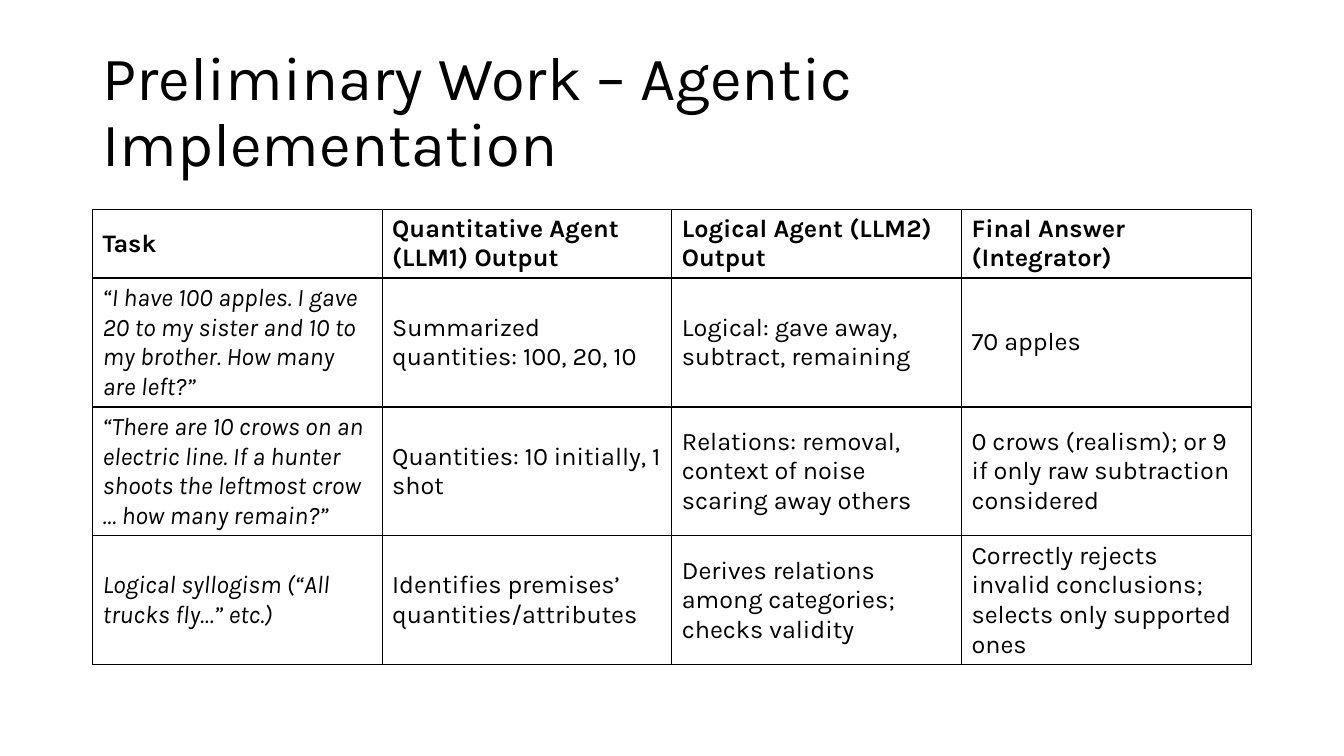
"""Build the slide on preliminary work: a title above a table of agent outputs."""
from lxml.etree import SubElement
from pptx import Presentation
from pptx.dml.color import RGBColor
from pptx.enum.text import MSO_ANCHOR
from pptx.oxml.ns import qn
from pptx.util import Cm, Pt

TITLE = "Preliminary Work – Agentic Implementation"
ROWS = [
    ("Task", "Quantitative Agent (LLM1) Output",
     "Logical Agent (LLM2) Output", "Final Answer (Integrator)"),
    ("“I have 100 apples. I gave 20 to my sister and 10 to my brother. How many are left?”",
     "Summarized quantities: 100, 20, 10",
     "Logical: gave away, subtract, remaining",
     "70 apples"),
    ("“There are 10 crows on an electric line. If a hunter shoots the leftmost crow … how many remain?”",
     "Quantities: 10 initially, 1 shot",
     "Relations: removal, context of noise scaring away others",
     "0 crows (realism); or 9 if only raw subtraction considered"),
    ("Logical syllogism (“All trucks fly…” etc.)",
     "Identifies premises’ quantities/attributes",
     "Derives relations among categories; checks validity",
     "Correctly rejects invalid conclusions; selects only supported ones"),
]
COLORS = {"ink": "000000", "line": "000000"}
FONT = "Karla"
LEFT, WIDTH = 2.33, 29.2
HEAD, BODY = 1.68, 3.18
CELL = {"vertical_anchor": MSO_ANCHOR.MIDDLE,
        "margin_top": Cm(0.1), "margin_bottom": Cm(0.1)}


def style(item, form):
    """Set attributes from a dict of format values."""
    for key, value in form.items():
        setattr(item, key, value)


def write(frame, text, **form):
    """Put one formatted paragraph into a text frame."""
    para = frame.paragraphs[0]
    run = para.add_run()
    run.text = text
    style(run.font, {"name": FONT, **form})
    run.font.color.rgb = RGBColor.from_string(COLORS["ink"])
    return para


def border(cell):
    """Draw a thin line on all four sides of a cell."""
    props = cell._tc.get_or_add_tcPr()
    for place, side in enumerate(("lnL", "lnR", "lnT", "lnB")):
        line = props.makeelement(qn(f"a:{side}"), {"w": str(Pt(1))})
        fill = SubElement(line, qn("a:solidFill"))
        SubElement(fill, qn("a:srgbClr"), val=COLORS["line"])
        props.insert(place, line)


def main():
    """Lay out the slide and save it."""
    deck = Presentation()
    deck.slide_width, deck.slide_height = Cm(33.87), Cm(19.05)
    slide = deck.slides.add_slide(deck.slide_layouts[6])

    box = slide.shapes.add_textbox(Cm(LEFT), Cm(1.02), Cm(WIDTH), Cm(3.68))
    frame = box.text_frame
    style(frame, {"word_wrap": True, "vertical_anchor": MSO_ANCHOR.MIDDLE})
    write(frame, TITLE, size=Pt(44)).line_spacing = 0.9

    count = len(ROWS[0])
    tall = HEAD + BODY * (len(ROWS) - 1)
    table = slide.shapes.add_table(
        len(ROWS), count, Cm(LEFT), Cm(5.28), Cm(WIDTH), Cm(tall)).table
    style(table, {"first_row": False, "horz_banding": False})
    for col in table.columns:
        col.width = Cm(WIDTH / count)
    for r, row in enumerate(ROWS):
        table.rows[r].height = Cm(BODY if r else HEAD)
        for c, text in enumerate(row):
            cell = table.cell(r, c)
            cell.fill.background()
            style(cell, CELL)
            border(cell)
            write(cell.text_frame, text, size=Pt(18),
                  bold=r == 0, italic=r > 0 and c == 0)
    deck.save("out.pptx")


if __name__ == "__main__":
    main()
